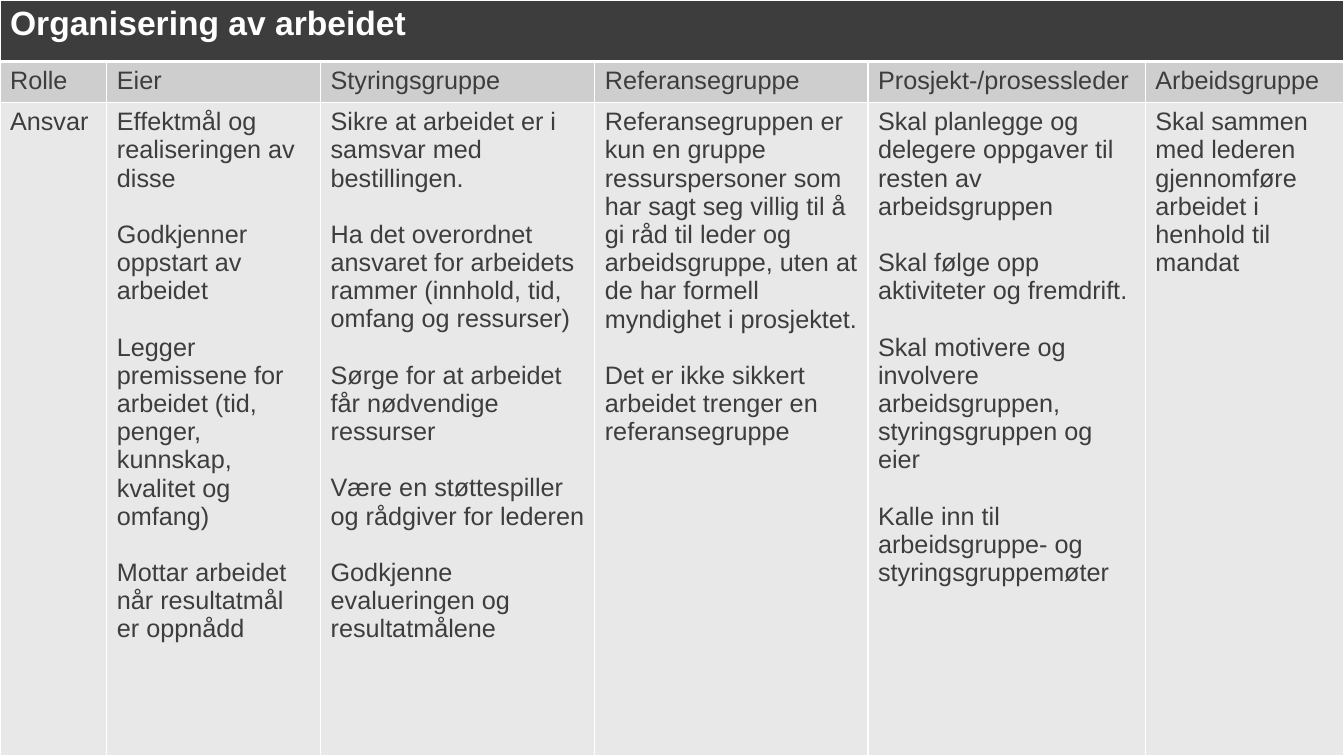
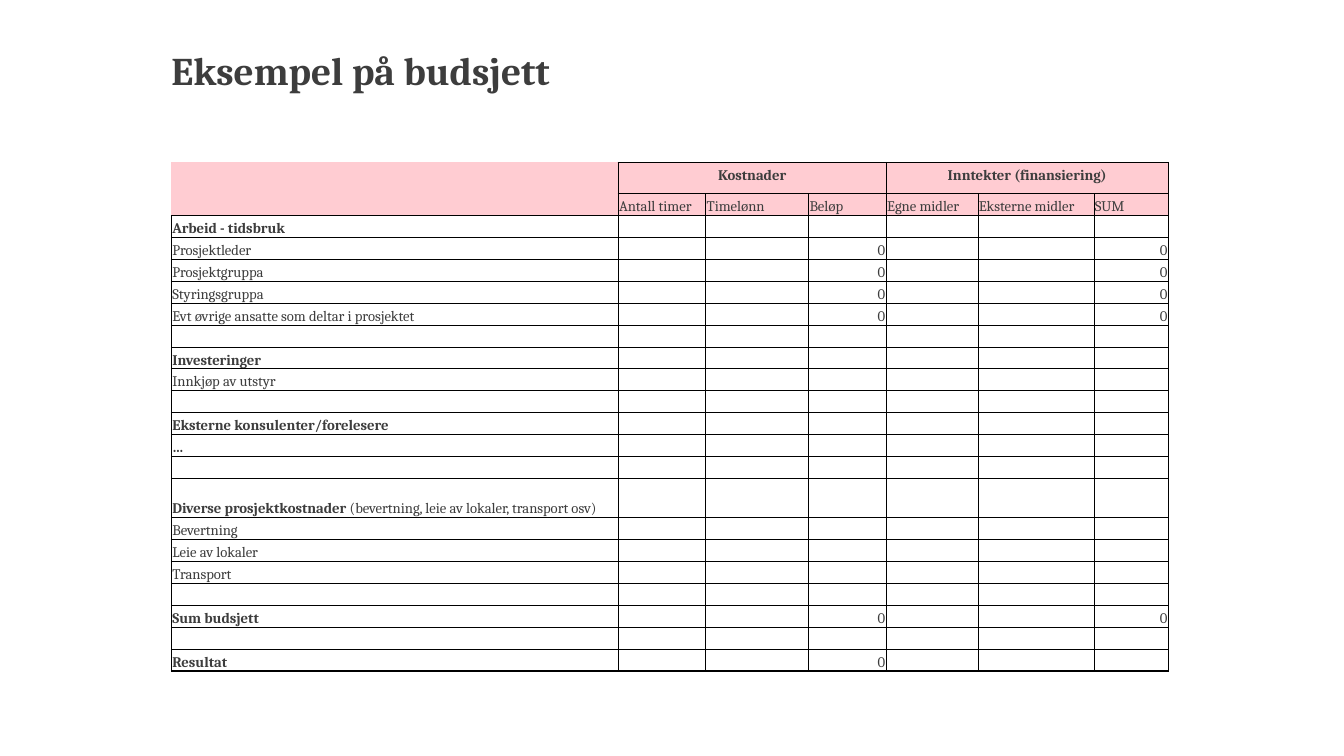
"""Build two slides: a role table for a project and a sample budget."""
from dataclasses import dataclass

from lxml.etree import SubElement
from pptx import Presentation
from pptx.dml.color import RGBColor
from pptx.enum.text import MSO_ANCHOR, PP_ALIGN
from pptx.oxml.ns import qn
from pptx.util import Inches, Pt


@dataclass(frozen=True)
class Theme:
    ink: str = "3D3D3D"
    white: str = "FFFFFF"
    black: str = "000000"
    role_head: str = "CECECE"
    role_body: str = "E8E8E8"
    budget_head: str = "FFCCD2"
    sans: str = "Arial"
    serif: str = "Cambria"
    banner_size: float = 24
    role_size: float = 18
    title_size: float = 28
    budget_size: float = 10.5
    thin: float = 0.5
    medium: float = 1
    thick: float = 3


theme = Theme()


def write(frame, text, font, size, color=theme.ink, bold=False, align=PP_ALIGN.LEFT, gap=0):
    """Fill a text frame with one paragraph per line of text."""
    frame.text = text
    for index, paragraph in enumerate(frame.paragraphs):
        paragraph.alignment = align
        paragraph.space_before = Pt(gap if index else 0)
        paragraph.font.name = font
        paragraph.font.size = Pt(size)
        paragraph.font.bold = bold
        paragraph.font.color.rgb = RGBColor.from_string(color)
        if not text:
            SubElement(paragraph._p, qn("a:endParaRPr"), sz=str(int(size * 100)))


def style_cell(cell, fill, line, widths):
    """Set the left, right, top and bottom border widths, then the fill."""
    properties = cell._tc.get_or_add_tcPr()
    for side, width in zip("LRTB", widths):
        border = SubElement(properties, qn(f"a:ln{side}"), w=str(Pt(width)))
        if width:
            paint = SubElement(border, qn("a:solidFill"))
            SubElement(paint, qn("a:srgbClr"), val=line)
        else:
            SubElement(border, qn("a:noFill"))
    if fill:
        cell.fill.solid()
        cell.fill.fore_color.rgb = RGBColor.from_string(fill)
    else:
        cell.fill.background()


presentation = Presentation()
presentation.slide_width = Inches(13.33)
presentation.slide_height = Inches(7.5)
title_only, blank = presentation.slide_layouts[5], presentation.slide_layouts[6]

responsibilities = {
    "Rolle": ["Ansvar"],
    "Eier": [
        "Effektmål og realiseringen av disse",
        "Godkjenner oppstart av arbeidet",
        "Legger premissene for arbeidet (tid, penger, kunnskap, kvalitet og omfang)",
        "Mottar arbeidet når resultatmål er oppnådd",
    ],
    "Styringsgruppe": [
        "Sikre at arbeidet er i samsvar med bestillingen.",
        "Ha det overordnet ansvaret for arbeidets rammer (innhold, tid, omfang og ressurser)",
        "Sørge for at arbeidet får nødvendige ressurser",
        "Være en støttespiller og rådgiver for lederen",
        "Godkjenne evalueringen og resultatmålene",
    ],
    "Referansegruppe": [
        "Referansegruppen er kun en gruppe ressurspersoner som har sagt seg villig til å gi råd "
        "til leder og arbeidsgruppe, uten at de har formell myndighet i prosjektet.",
        "Det er ikke sikkert arbeidet trenger en referansegruppe",
    ],
    "Prosjekt-/prosessleder": [
        "Skal planlegge og delegere oppgaver til resten av arbeidsgruppen",
        "Skal følge opp aktiviteter og fremdrift.",
        "Skal motivere og involvere arbeidsgruppen, styringsgruppen og eier",
        "Kalle inn til arbeidsgruppe- og styringsgruppemøter",
    ],
    "Arbeidsgruppe": ["Skal sammen med lederen gjennomføre arbeidet i henhold til mandat"],
}
role_widths = [1.06, 2.12, 2.72, 2.71, 2.75, 1.97]
role_heights = [0.61, 0.41, 6.48]
role_fills = [theme.ink, theme.role_head, theme.role_body]

organisation = presentation.slides.add_slide(blank)
roles = organisation.shapes.add_table(
    3, len(role_widths), 0, 0, presentation.slide_width, presentation.slide_height).table
roles.horz_banding = roles.first_row = False
for row, height in zip(roles.rows, role_heights):
    row.height = Inches(height)
for col, (role, duties) in enumerate(responsibilities.items()):
    roles.columns[col].width = Inches(role_widths[col])
    for row, fill in enumerate(role_fills):
        top = theme.thick if row == 1 else theme.medium
        bottom = theme.thick if row == 0 else theme.medium
        style_cell(roles.cell(row, col), fill, theme.white, (theme.medium, theme.medium, top, bottom))
    write(roles.cell(1, col).text_frame, role, theme.sans, theme.role_size)
    write(roles.cell(2, col).text_frame, "\n".join(duties), theme.sans, theme.role_size, gap=20)
roles.cell(0, 0).merge(roles.cell(0, len(role_widths) - 1))
write(roles.cell(0, 0).text_frame, "Organisering av arbeidet", theme.sans, theme.banner_size,
      theme.white, bold=True)

budget_slide = presentation.slides.add_slide(title_only)
title = budget_slide.shapes.title
title.left, title.top, title.width, title.height = map(Inches, (1.7, 0.46, 9.97, 0.94))
heading = title.text_frame
heading.margin_left = heading.margin_right = heading.margin_top = heading.margin_bottom = 0
heading.vertical_anchor = MSO_ANCHOR.TOP
write(heading, "Eksempel på budsjett", theme.serif, theme.title_size, bold=True)

misc_costs = "Diverse prosjektkostnader "
sections = {"Arbeid - tidsbruk", "Investeringer", "Eksterne konsulenter/forelesere", "…",
            misc_costs, "Sum budsjett", "Resultat"}
cost_total, income_total = 3, 6
both_totals = (cost_total, income_total)
budget_lines = [
    ("Arbeid - tidsbruk", ()),
    ("Prosjektleder", both_totals),
    ("Prosjektgruppa", both_totals),
    ("Styringsgruppa", both_totals),
    ("Evt øvrige ansatte som deltar i prosjektet", both_totals),
    ("", ()),
    ("Investeringer", ()),
    ("Innkjøp av utstyr", ()),
    ("", ()),
    ("Eksterne konsulenter/forelesere", ()),
    ("…", ()),
    ("", ()),
    (misc_costs, ()),
    ("Bevertning", ()),
    ("Leie av lokaler", ()),
    ("Transport", ()),
    ("", ()),
    ("Sum budsjett", both_totals),
    ("", ()),
    ("Resultat", (cost_total,)),
]
column_heads = ["", "Antall timer", "Timelønn", "Beløp", "Egne midler", "Eksterne midler", "SUM"]
grid = [[""] * 7, column_heads]
for label, totals in budget_lines:
    grid.append([label] + ["0" if col in totals else "" for col in range(1, 7)])

budget_widths = [4.43, 0.87, 1.02, 0.77, 0.91, 1.15, 0.74]
budget_height, group_height, misc_height = 5.05, 0.31, 0.39
line_height = (budget_height - group_height - misc_height) / (len(grid) - 2)
budget = budget_slide.shapes.add_table(
    len(grid), 7, Inches(1.7), Inches(1.61), Inches(sum(budget_widths)), Inches(budget_height)).table
budget.horz_banding = budget.first_row = False
for col, width in enumerate(budget_widths):
    budget.columns[col].width = Inches(width)

for row, values in enumerate(grid):
    special_heights = {"": group_height} if row == 0 else {misc_costs: misc_height}
    budget.rows[row].height = Inches(special_heights.get(values[0], line_height))
    for col, value in enumerate(values):
        cell = budget.cell(row, col)
        in_head = row < 2
        in_corner = in_head and col == 0
        left = theme.medium if row and col in (0, cost_total + 1) else theme.thin
        right = theme.medium if row and col in both_totals else theme.thin
        top = theme.thin
        bottom = theme.medium if row == len(grid) - 1 else theme.thin
        if in_corner:
            left = top = 0
        style_cell(cell, theme.budget_head if in_head else None, theme.black,
                   (left, right, top, bottom))
        cell.margin_left = cell.margin_right = cell.margin_top = Inches(0.01)
        cell.margin_bottom = 0
        cell.vertical_anchor = MSO_ANCHOR.BOTTOM
        write(cell.text_frame, value, theme.serif, theme.budget_size, bold=value in sections,
              align=PP_ALIGN.RIGHT if value == "0" else PP_ALIGN.LEFT)
        if value == misc_costs:
            detail = cell.text_frame.paragraphs[0].add_run()
            detail.text = "(bevertning, leie av lokaler, transport osv)"
            detail.font.bold = False

budget.cell(0, 0).merge(budget.cell(1, 0))
for group, first, last in (("Kostnader", 1, cost_total),
                           ("Inntekter (finansiering)", cost_total + 1, income_total)):
    cell = budget.cell(0, first)
    cell.merge(budget.cell(0, last))
    cell.margin_left = cell.margin_right = Inches(0.09)
    cell.margin_top = cell.margin_bottom = Inches(0.05)
    cell.vertical_anchor = MSO_ANCHOR.TOP
    write(cell.text_frame, group, theme.serif, theme.budget_size, bold=True, align=PP_ALIGN.CENTER)

presentation.save("out.pptx")
